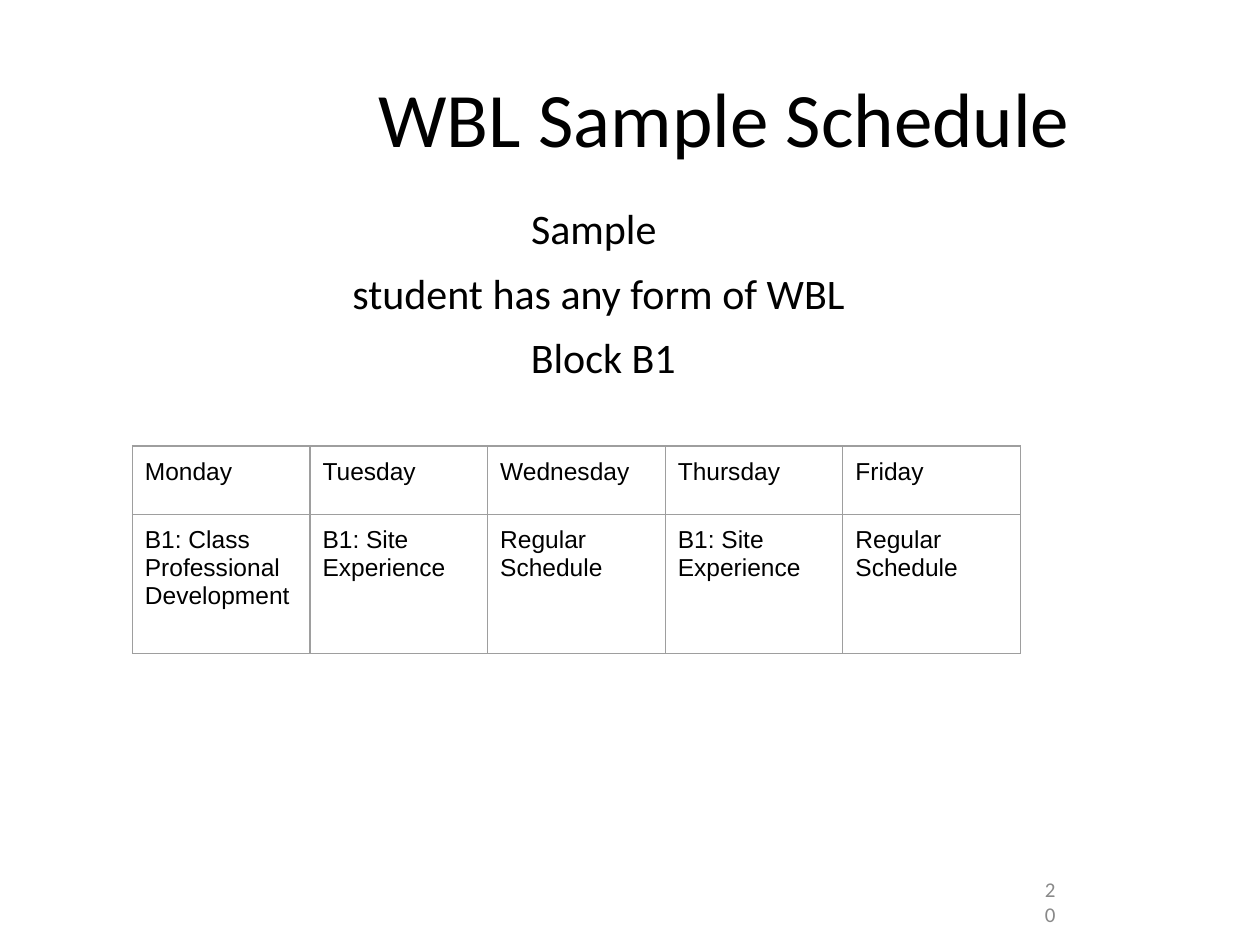
from lxml.etree import SubElement
from pptx import Presentation
from pptx.dml.color import RGBColor
from pptx.enum.text import MSO_ANCHOR, PP_ALIGN
from pptx.oxml.ns import qn
from pptx.util import Inches, Pt

# Content
TITLE = ["WBL Sample Schedule"]
BODY = ["Sample ", "student has any form of WBL", " Block B1"]
PAGE = ["20"]
DAYS = [
    ("Monday", ["B1: Class", "Professional Development"]),
    ("Tuesday", ["B1: Site Experience"]),
    ("Wednesday", ["Regular Schedule"]),
    ("Thursday", ["B1: Site Experience"]),
    ("Friday", ["Regular Schedule"]),
]

# Formats: font name, size, colour
HEAD = {"name": "Calibri", "size": Pt(44), "color": "000000"}
TEXT = {**HEAD, "size": Pt(24)}
FOOT = {**HEAD, "size": Pt(12), "color": "898989"}
CELL = {"name": "Arial", "size": Pt(14), "color": "000000"}

# Boxes: lines, place, margins, anchor, format
WIDE = (0.06, 0.06, 0.1, 0.06)
BOXES = [
    (TITLE, (2.04, 0.1, 7.46, 1.65), WIDE, MSO_ANCHOR.MIDDLE, HEAD),
    (BODY, (-0.34, 1.55, 10.22, 5.95), WIDE, MSO_ANCHOR.TOP, TEXT),
    (PAGE, (8.19, 7, 0.29, 0.31), (0.1, 0.05, 0.1, 0.05),
     MSO_ANCHOR.MIDDLE, FOOT),
]

# Table sizes
LEFT, TOP, COL = 1.05, 3.54, 1.41
ROWS = [0.54, 1.11]
SIDES = ["left", "top", "right", "bottom"]
GRID = "9E9E9E"


def rgb(code):
    return RGBColor.from_string(code)


def write(frame, lines, form, align=PP_ALIGN.LEFT, gap=0):
    for i, line in enumerate(lines):
        para = frame.add_paragraph() if i else frame.paragraphs[0]
        para.alignment = align
        para.space_before = Pt(gap if i else 0)
        run = para.add_run()
        run.text = line
        for key, val in form.items():
            if key == "color":
                run.font.color.rgb = rgb(val)
            else:
                setattr(run.font, key, val)


def pad(part, sizes):
    for side, size in zip(SIDES, sizes):
        setattr(part, "margin_" + side, Inches(size))


def frame_cell(cell):
    props = cell._tc.get_or_add_tcPr()
    for tag in ("a:lnL", "a:lnR", "a:lnT", "a:lnB"):
        line = SubElement(props, qn(tag), w=str(Pt(0.75)))
        fill = SubElement(line, qn("a:solidFill"))
        SubElement(fill, qn("a:srgbClr"), val=GRID)
    cell.fill.background()


def main():
    deck = Presentation()
    deck.slide_width, deck.slide_height = Inches(10), Inches(7.5)
    slide = deck.slides.add_slide(deck.slide_layouts[6])

    # Title, body and page number
    for lines, place, sizes, anchor, form in BOXES:
        box = slide.shapes.add_textbox(*map(Inches, place))
        frame = box.text_frame
        frame.word_wrap = True
        frame.vertical_anchor = anchor
        pad(frame, sizes)
        write(frame, lines, form, PP_ALIGN.CENTER, 8)

    # Weekly schedule
    place = (LEFT, TOP, COL * len(DAYS), sum(ROWS))
    table = slide.shapes.add_table(
        len(ROWS), len(DAYS), *map(Inches, place)).table
    table.first_row = table.horz_banding = False
    for row, high in zip(table.rows, ROWS):
        row.height = Inches(high)
    for c, (day, plan) in enumerate(DAYS):
        table.columns[c].width = Inches(COL)
        for r, lines in enumerate(([day], plan)):
            cell = table.cell(r, c)
            pad(cell, [0.1] * 4)
            frame_cell(cell)
            write(cell.text_frame, lines, CELL)

    deck.save("out.pptx")


if __name__ == "__main__":
    main()
